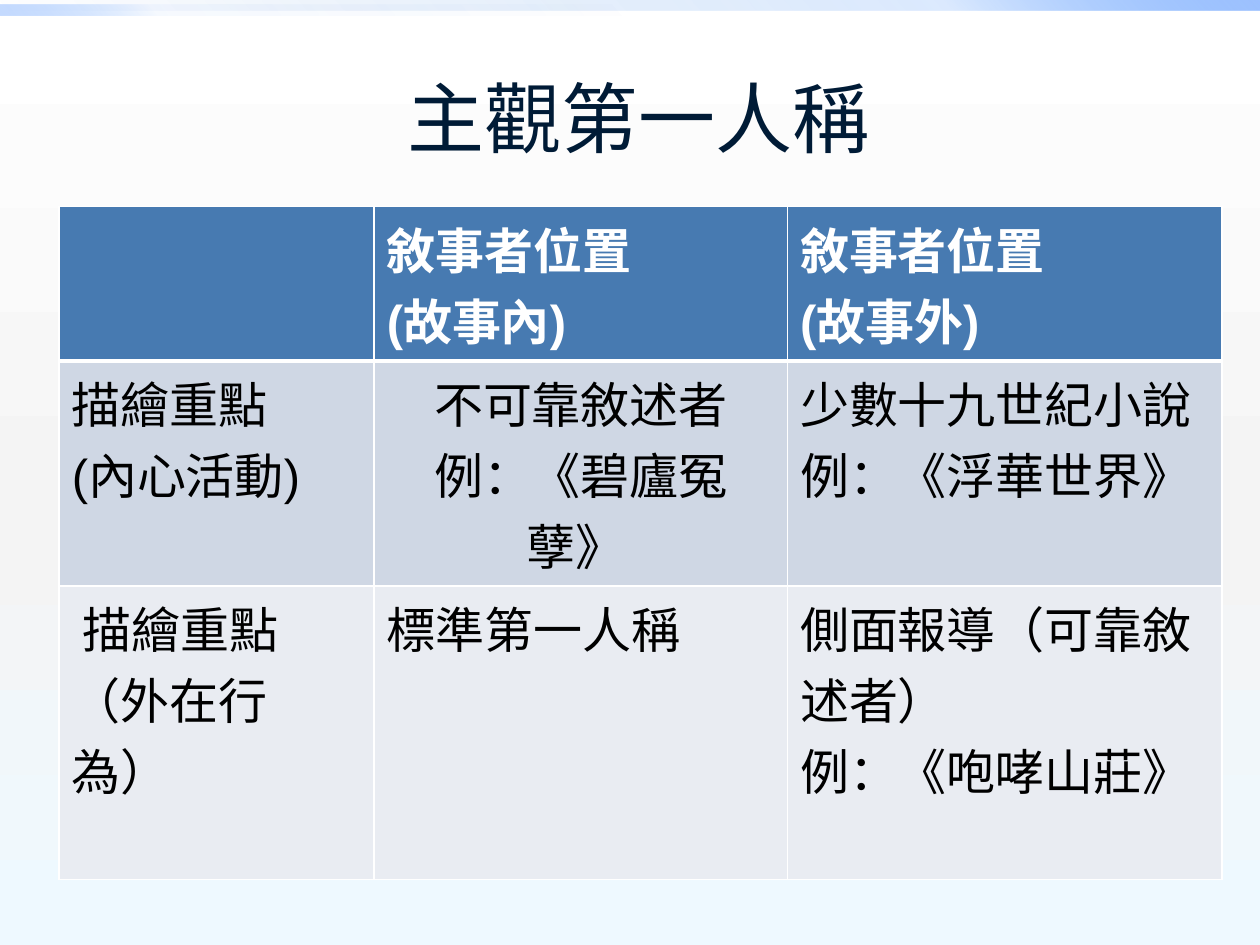
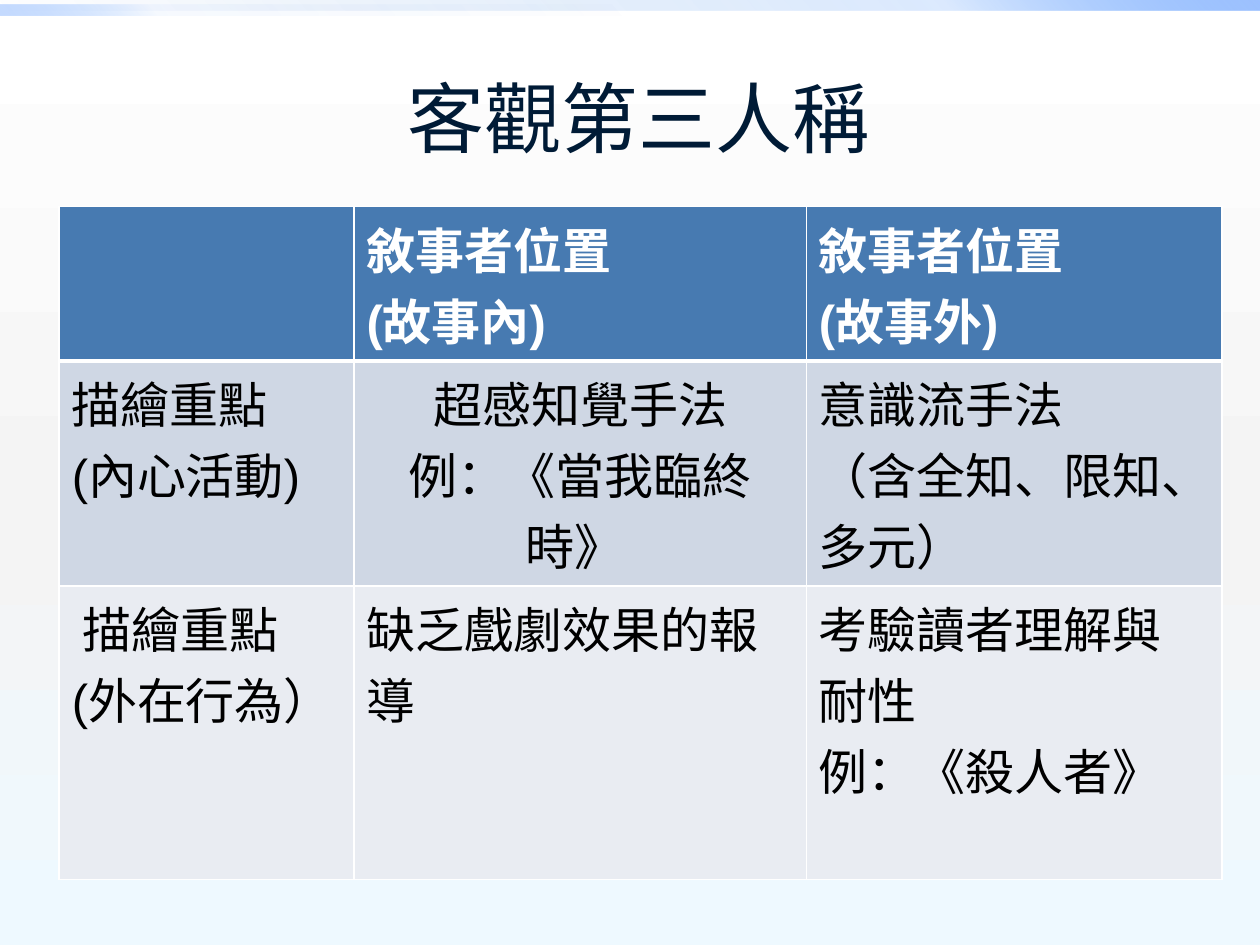
from lxml import etree
from pptx import Presentation
from pptx.dml.color import RGBColor
from pptx.enum.shapes import MSO_SHAPE
from pptx.enum.text import MSO_ANCHOR, PP_ALIGN
from pptx.oxml.ns import qn
from pptx.util import Inches, Pt

RECTANGLE = MSO_SHAPE.RECTANGLE
MIDDLE = MSO_ANCHOR.MIDDLE
LEFT, CENTER = PP_ALIGN.LEFT, PP_ALIGN.CENTER
WIDTH, HEIGHT = Inches(10), Inches(7.5)
TITLE_ONLY = 5

FONT = "Arial"
NAVY, WHITE, BLACK = "001B36", "FFFFFF", "000000"
ROW_FILLS = ["477AB1", "CFD7E4", "E9ECF2"]
ROW_HEIGHTS = [16.13, 23.73, 31.07]
BACKDROP = [(0, "FFFFFF", 100), (55, "F4F4F4", 100), (100, "EEF9FF", 100)]
TOP_BAND = [(0, "0058B7", 0), (75, "4F95FF", 20), (100, "9EC2FF", 100)]
LOWER_BAND = [(0, "0058B7", 0), (75, "4F95FF", 5), (100, "9EC2FF", 60)]

HEADER = ["", "敘事者位置\n(故事內)", "敘事者位置\n(故事外)"]
INNER_LIFE = "描繪重點\n(內心活動)"
FIRST_PERSON = [
    HEADER,
    [INNER_LIFE, "不可靠敘述者\n例：《碧廬冤孽》 ", "少數十九世紀小說\n例：《浮華世界》"],
    [" 描繪重點\n（外在行為）", "標準第一人稱", "側面報導（可靠敘述者）\n例：《咆哮山莊》"],
]
THIRD_PERSON = [
    HEADER,
    [INNER_LIFE, "超感知覺手法\n例：《當我臨終時》 ", "意識流手法\n（含全知、限知、多元）"],
    [" 描繪重點\n(外在行為）", "缺乏戲劇效果的報導", "考驗讀者理解與耐性\n例：《殺人者》"],
]


def across(percent):
    return round(WIDTH * percent / 100)


def down(percent):
    return round(HEIGHT * percent / 100)


def color(code):
    return RGBColor.from_string(code)


def set_gradient(fill, owner, stops, angle):
    fill.gradient()
    gradient = owner.find(".//" + qn("a:gradFill"))
    stop_list = gradient.find(qn("a:gsLst"))
    for old_stop in list(stop_list):
        stop_list.remove(old_stop)
    for position, code, opacity in stops:
        stop = etree.SubElement(stop_list, qn("a:gs"), pos=str(position * 1000))
        tint = etree.SubElement(stop, qn("a:srgbClr"), val=code)
        etree.SubElement(tint, qn("a:alpha"), val=str(opacity * 1000))
    gradient.find(qn("a:lin")).set("ang", str(angle * 60000))


def add_master_band(deck, page, order, top, width, stops, angle):
    box = page.shapes.add_shape(RECTANGLE, 0, down(top), across(width), down(1.07))
    box.shadow.inherit = False
    box.line.fill.background()
    set_gradient(box.fill, box.element, stops, angle)
    box.element.nvSpPr.cNvPr.set("id", str(20 + order))
    deck.slide_master.shapes.element.insert(2 + order, box.element)


def write_text(frame, text, size, code, bold=False, align=LEFT):
    for index, line in enumerate(text.split("\n")):
        para = frame.paragraphs[0] if index == 0 else frame.add_paragraph()
        para.alignment = align
        span = para.add_run()
        span.text = line
        span.font.name = FONT
        span.font.size = Pt(size)
        span.font.bold = bold
        span.font.color.rgb = color(code)


def add_borders(cell, **widths):
    properties = cell._tc.get_or_add_tcPr()
    for side in "LRTB":
        line = etree.SubElement(
            properties, qn("a:ln" + side), w=str(Pt(widths.get(side, 1)))
        )
        paint = etree.SubElement(line, qn("a:solidFill"))
        etree.SubElement(paint, qn("a:srgbClr"), val=WHITE)


def add_title(page, text):
    title = page.shapes.title
    title.text_frame.vertical_anchor = MIDDLE
    write_text(title.text_frame, text, size=44, code=NAVY, align=CENTER)


def add_narrator_table(page, rows, column_widths):
    frame = page.shapes.add_table(
        len(rows), len(column_widths), across(4.7), down(21.87),
        across(sum(column_widths)), down(sum(ROW_HEIGHTS)),
    )
    table = frame.table
    for column, width in zip(table.columns, column_widths):
        column.width = across(width)
    for row, height in zip(table.rows, ROW_HEIGHTS):
        row.height = down(height)
    for row_index, texts in enumerate(rows):
        is_header = row_index == 0
        for column_index, text in enumerate(texts):
            cell = table.cell(row_index, column_index)
            add_borders(cell, B=3 if is_header else 1, T=3 if row_index == 1 else 1)
            cell.fill.solid()
            cell.fill.fore_color.rgb = color(ROW_FILLS[row_index])
            if text:
                write_text(
                    cell.text_frame, text, size=28,
                    code=WHITE if is_header else BLACK, bold=is_header,
                    align=CENTER if (row_index, column_index) == (1, 1) else LEFT,
                )


def add_person_page(deck, title, rows, column_widths):
    page = deck.slides.add_slide(deck.slide_layouts[TITLE_ONLY])
    add_title(page, title)
    add_narrator_table(page, rows, column_widths)
    return page


def main():
    deck = Presentation()
    deck.slide_width, deck.slide_height = WIDTH, HEIGHT
    master = deck.slide_master
    set_gradient(master.background.fill, master.element, BACKDROP, 90)
    page = add_person_page(deck, " 主觀第一人稱", FIRST_PERSON, [25, 32.8, 34.5])
    add_master_band(deck, page, 0, 0, 100, TOP_BAND, 315)
    add_master_band(deck, page, 1, 0.53, 50, LOWER_BAND, 135)
    add_person_page(deck, " 客觀第三人稱", THIRD_PERSON, [23.4, 35.9, 33])
    deck.save("out.pptx")


if __name__ == "__main__":
    main()
